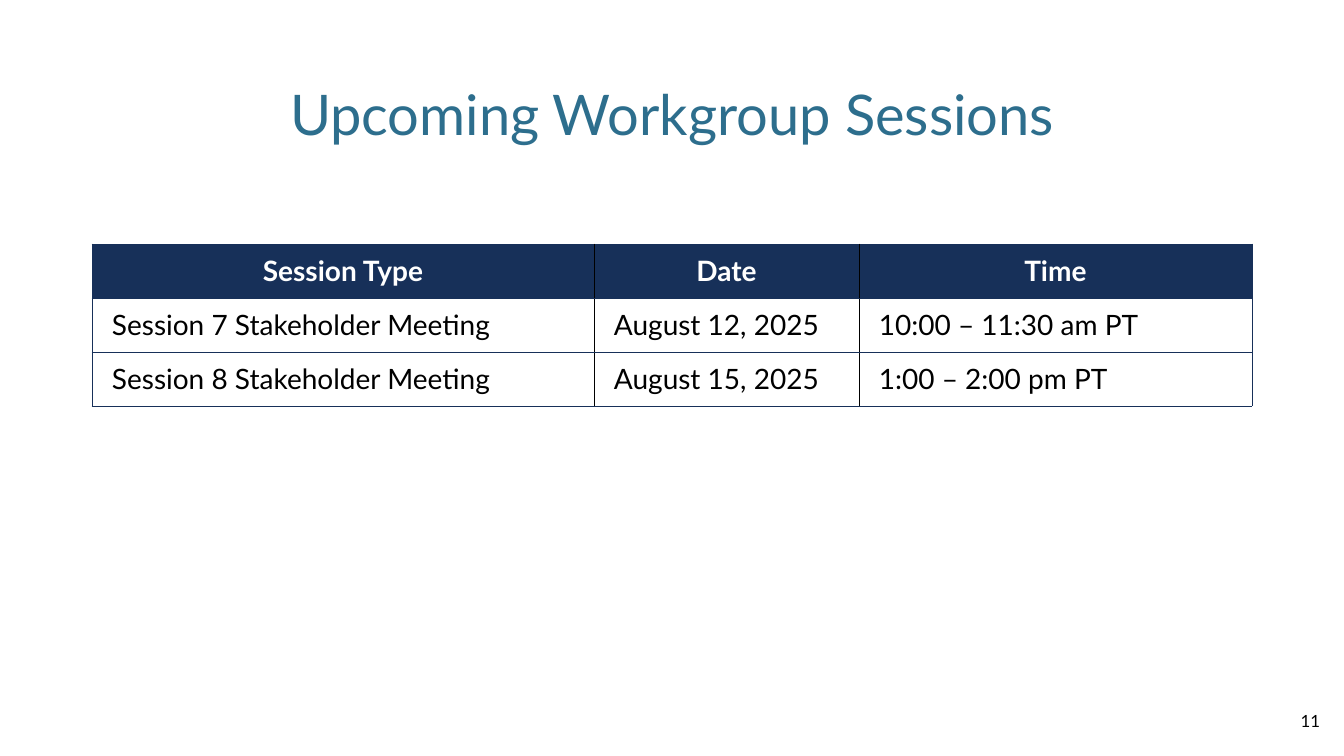
from lxml.etree import SubElement
from pptx import Presentation
from pptx.dml.color import RGBColor
from pptx.enum.text import MSO_ANCHOR, PP_ALIGN
from pptx.oxml.ns import qn
from pptx.util import Emu, Pt

TITLE = "Upcoming Workgroup Sessions"
NUMBER = "11"
ROWS = [
    ("Session Type", "Date", "Time"),
    ("Session 7 Stakeholder Meeting", "August 12, 2025", "10:00 – 11:30 am PT"),
    ("Session 8 Stakeholder Meeting", "August 15, 2025", "1:00 – 2:00 pm PT"),
]
WIDTHS = (502, 265, 393)
LEFT, TOP, HIGH = 92, 244, 54

FONT = "Lato"
TEAL = RGBColor(0x2D, 0x6E, 0x8D)
NAVY = RGBColor(0x17, 0x30, 0x59)
BLACK = RGBColor(0, 0, 0)
WHITE = RGBColor(255, 255, 255)


def px(n):
    return Emu(round(n * 914400 / 100.8))


def write(frame, text, size, color, align, bold=False):
    para = frame.paragraphs[0]
    para.alignment = align
    run = para.add_run()
    run.text = text
    run.font.name = FONT
    run.font.size = Pt(size)
    run.font.bold = bold
    run.font.color.rgb = color


def label(slide, box, text, size, color, align):
    frame = slide.shapes.add_textbox(*map(px, box)).text_frame
    frame.word_wrap = True
    frame.vertical_anchor = MSO_ANCHOR.MIDDLE
    write(frame, text, size, color, align)


def border(cell, side, color):
    props = cell._tc.get_or_add_tcPr()
    line = SubElement(props, qn("a:ln" + side), w=str(Pt(0.5)))
    fill = SubElement(line, qn("a:solidFill"))
    SubElement(fill, qn("a:srgbClr"), val=str(color))


def grid(slide):
    size = map(px, (LEFT, TOP, sum(WIDTHS), HIGH * len(ROWS)))
    table = slide.shapes.add_table(len(ROWS), len(WIDTHS), *size).table
    table.first_row = table.horz_banding = False
    for col, width in zip(table.columns, WIDTHS):
        col.width = px(width)
    last = len(WIDTHS) - 1
    for r, texts in enumerate(ROWS):
        table.rows[r].height = px(HIGH)
        head = r == 0
        for c, text in enumerate(texts):
            cell = table.cell(r, c)
            cell.margin_left = cell.margin_right = px(20)
            cell.margin_top = cell.margin_bottom = px(10)
            border(cell, "L", NAVY if c == 0 else BLACK)
            border(cell, "R", NAVY if c == last else BLACK)
            border(cell, "T", NAVY)
            border(cell, "B", NAVY)
            if head:
                cell.fill.solid()
                cell.fill.fore_color.rgb = NAVY
            else:
                cell.fill.background()
            write(cell.text_frame, text, 20, WHITE if head else BLACK,
                  PP_ALIGN.CENTER if head else PP_ALIGN.LEFT, head)


def main():
    deck = Presentation()
    deck.slide_width, deck.slide_height = px(1344), px(756)
    slide = deck.slides.add_slide(deck.slide_layouts[6])
    label(slide, (LEFT, 40, sum(WIDTHS), 146), TITLE, 40, TEAL, PP_ALIGN.CENTER)
    grid(slide)
    label(slide, (1028, 701, 302, 40), NUMBER, 12, BLACK, PP_ALIGN.RIGHT)
    deck.save("out.pptx")


if __name__ == "__main__":
    main()
